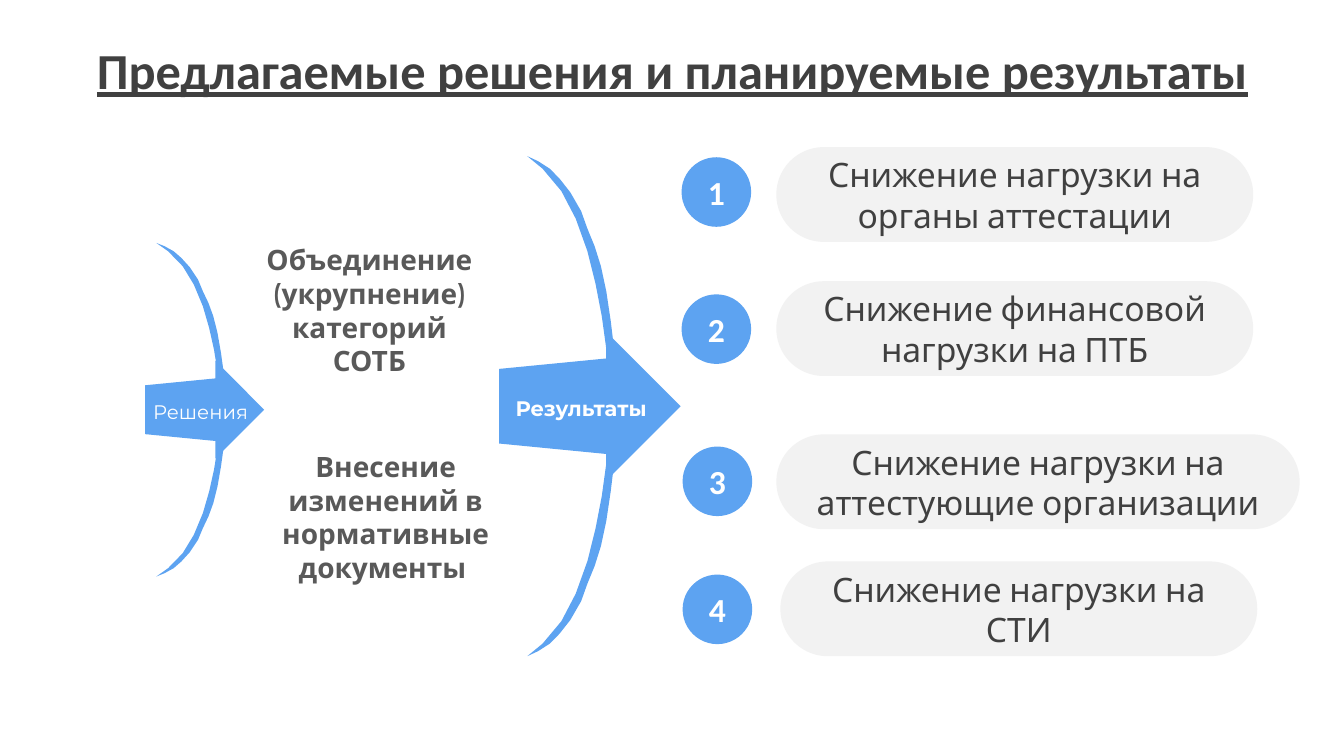
from pptx import Presentation
from pptx.dml.color import RGBColor
from pptx.enum.shapes import MSO_SHAPE as SHAPE
from pptx.enum.text import MSO_ANCHOR as ANCHOR, MSO_AUTO_SIZE as AUTO, PP_ALIGN as ALIGN
from pptx.util import Inches, Pt

BLUE = RGBColor(0x5D, 0xA3, 0xF1)
PALE = RGBColor(0xF2, 0xF2, 0xF2)
DARK = RGBColor(0x40, 0x40, 0x40)
GREY = RGBColor(0x59, 0x59, 0x59)
WHITE = RGBColor(0xFF, 0xFF, 0xFF)

TITLE = dict(size=Pt(36), name="Calibri", bold=True, underline=True)
BADGE = dict(size=Pt(24), name="Calibri", bold=True)
RESULT = dict(size=Pt(24), name="Cabin", bold=False)
SOLUTION = dict(size=Pt(20), name="Cabin", bold=True)
SMALL_LABEL = dict(size=Pt(14), name="Montserrat", bold=False)
LARGE_LABEL = dict(size=Pt(15), name="Montserrat", bold=True)

OUTER = [(0, 0), (.12, .02), (.25, .05), (.36, .09), (.48, .145), (.6, .22), (.67, .29),
         (.75, .36), (.82, .44), (.88, .54), (.93, .66), (.97, .78), (1, .92), (1, 1)]
INNER = [(.91, 1), (.9, .88), (.88, .77), (.83, .64), (.76, .51), (.67, .38),
         (.54, .25), (.38, .14), (.17, .05)]
ARROW = [(0, .75), (0, .25), (.59, .18), (.59, 0), (1, .5), (.59, 1), (.59, .82)]

RESULTS = [
    ("Снижение нагрузки на органы аттестации", (6.76, 1.56), (7.7, 1.46, 4.73, .94)),
    ("Снижение финансовой нагрузки на ПТБ", (6.76, 2.92), (7.7, 2.79, 4.73, .94)),
    ("Снижение нагрузки на аттестующие организации", (6.77, 4.43), (7.7, 4.31, 5.19, .94)),
    ("Снижение нагрузки на СТИ", (6.77, 5.7), (7.74, 5.57, 4.73, .94)),
]
SOLUTIONS = [
    ("Объединение (укрупнение) категорий СОТБ", (2.48, 2.36, 2.37, 1.45)),
    ("Внесение изменений в нормативные документы ", (2.64, 4.41, 2.37, 1.45)),
]
STAGES = [
    ("Решения", SMALL_LABEL, (1.55, 2.41, .69, 3.31), (1.44, 3.58, 1.18, .97),
     (1.39, 3.91, 1.2, .34)),
    ("Результаты", LARGE_LABEL, (5.23, 1.55, .89, 4.96), (4.95, 3.29, 1.8, 1.48),
     (4.95, 3.87, 1.63, .35)),
]


def write(sp, text, fmt, color, anchor=ANCHOR.MIDDLE, inset=(.1, .05)):
    tf = sp.text_frame
    side, edge = map(Inches, inset)
    settings = dict(word_wrap=True, auto_size=AUTO.NONE, vertical_anchor=anchor,
                    margin_left=side, margin_right=side, margin_top=edge, margin_bottom=edge)
    for key, value in settings.items():
        setattr(tf, key, value)
    p = tf.paragraphs[0]
    p.alignment = ALIGN.CENTER
    r = p.add_run()
    r.text = text
    for key, value in fmt.items():
        setattr(r.font, key, value)
    r.font.color.rgb = color


def paint(sp, color):
    sp.shadow.inherit = False
    sp.fill.solid()
    sp.fill.fore_color.rgb = color
    sp.line.fill.background()


def add_title(s, text):
    sp = s.shapes.title
    box = dict(left=.67, top=.3, width=12, height=.78)
    for key, value in box.items():
        setattr(sp, key, Inches(value))
    write(sp, text, TITLE, DARK, inset=(0, .07))


def add_preset(s, kind, box, color):
    sp = s.shapes.add_shape(kind, *map(Inches, box))
    paint(sp, color)
    return sp


def add_label(shapes, text, box, fmt, color, anchor):
    sp = shapes.add_textbox(*map(Inches, box))
    write(sp, text, fmt, color, anchor)


def add_outline(shapes, profile, box):
    left, top, width, height = box
    points = [(Inches(left + x * width), Inches(top + y * height)) for x, y in profile]
    builder = shapes.build_freeform(*points[0])
    builder.add_line_segments(points[1:], close=True)
    paint(builder.convert_to_shape(), BLUE)


def crescent():
    def mirror(points):
        return [(x, 2 - y) for x, y in reversed(points)]
    outline = OUTER + mirror(OUTER[:-1]) + mirror(INNER)[::-1][::-1] + INNER
    return [(x, y / 2) for x, y in outline]


def add_stage(s, text, fmt, arc_box, arrow_box, label_box):
    shapes = s.shapes.add_group_shape().shapes
    add_outline(shapes, crescent(), arc_box)
    add_outline(shapes, ARROW, arrow_box)
    add_label(shapes, text, label_box, fmt, WHITE, ANCHOR.MIDDLE)


def add_result(s, number, text, badge_at, pill_box):
    badge = add_preset(s, SHAPE.OVAL, (*badge_at, .69, .69), BLUE)
    write(badge, str(number), BADGE, WHITE)
    pill = add_preset(s, SHAPE.ROUNDED_RECTANGLE, pill_box, PALE)
    pill.adjustments[0] = .5
    write(pill, text, RESULT, DARK, inset=(.2, .05))


def main():
    prs = Presentation()
    prs.slide_width, prs.slide_height = Inches(13.33), Inches(7.5)
    s = prs.slides.add_slide(prs.slide_layouts[5])
    add_title(s, "Предлагаемые решения и планируемые результаты")
    for stage in STAGES:
        add_stage(s, *stage)
    for text, box in SOLUTIONS:
        add_label(s.shapes, text, box, SOLUTION, GREY, ANCHOR.TOP)
    for number, result in enumerate(RESULTS, 1):
        add_result(s, number, *result)
    prs.save("out.pptx")


if __name__ == "__main__":
    main()
